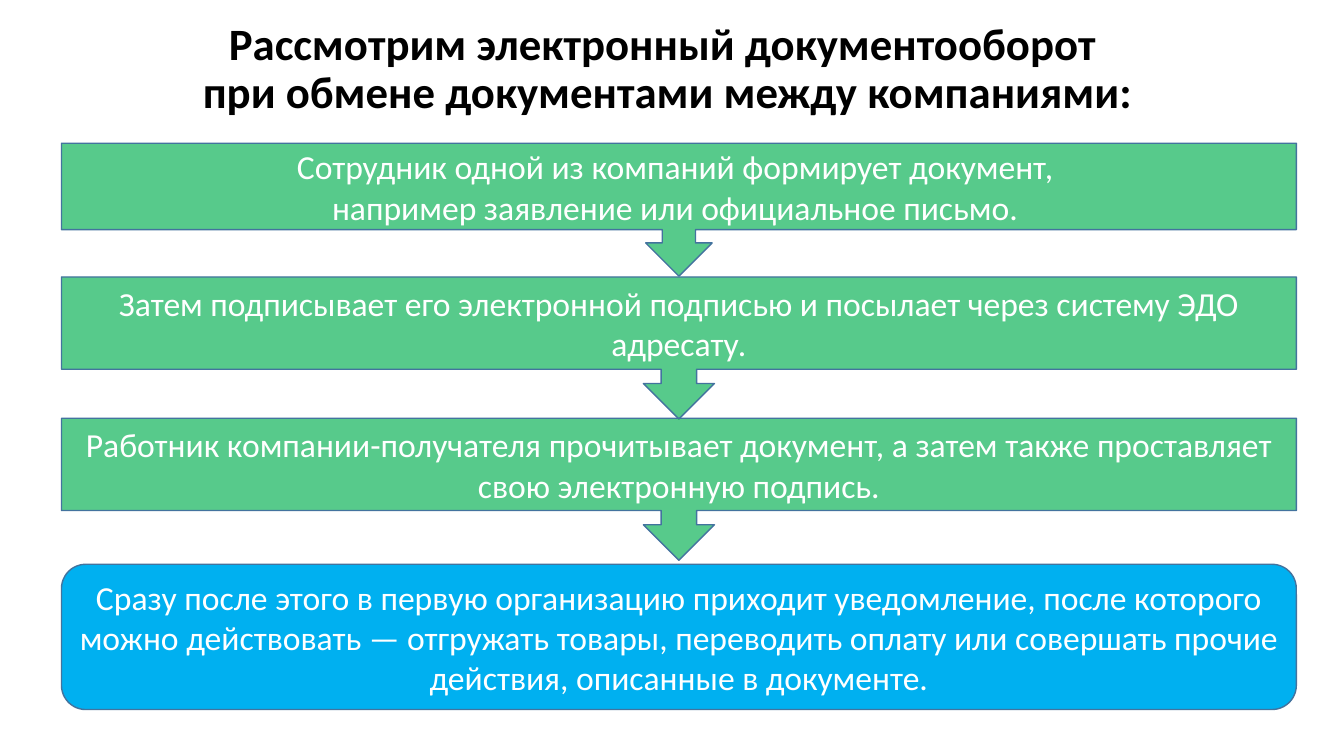
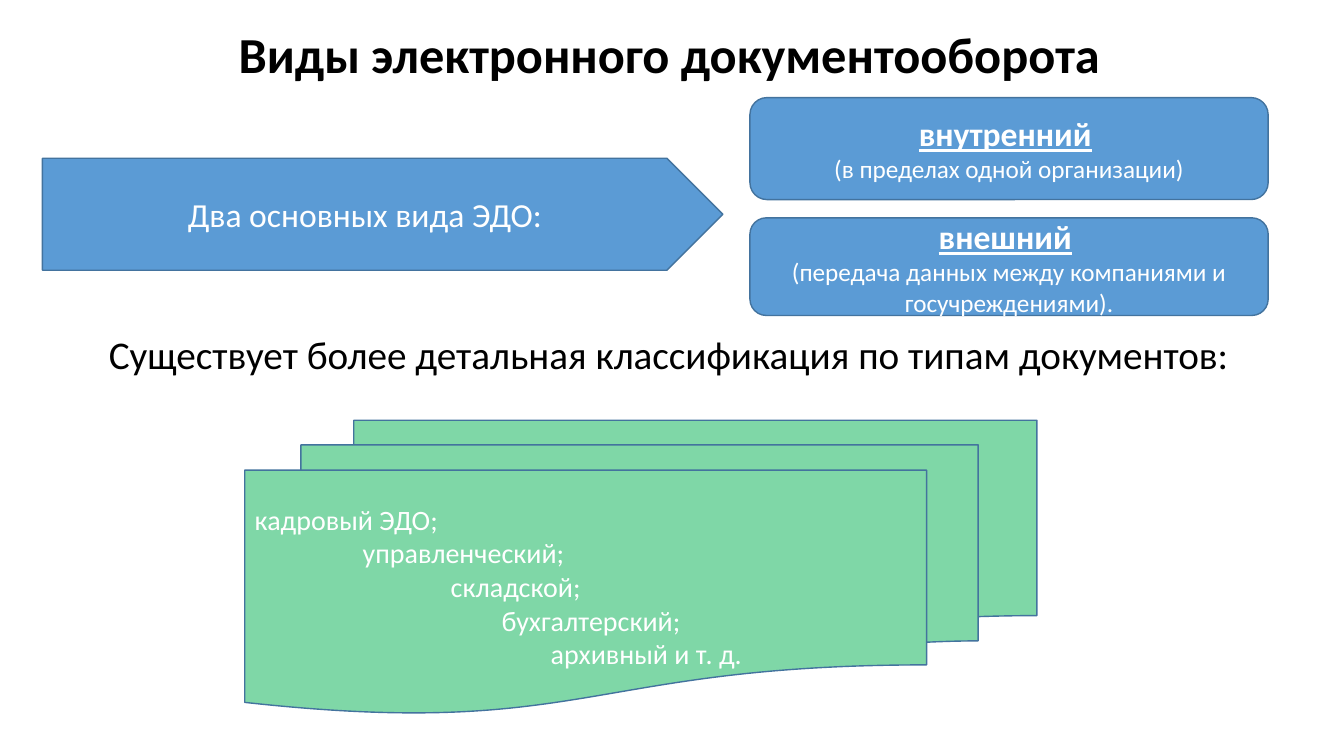
"""Build two slides on electronic document exchange."""
from lxml.etree import SubElement
from pptx import Presentation
from pptx.dml.color import RGBColor
from pptx.enum.shapes import MSO_SHAPE
from pptx.enum.text import MSO_ANCHOR, PP_ALIGN
from pptx.oxml.ns import qn
from pptx.util import Cm, Pt

BLACK = RGBColor(0x00, 0x00, 0x00)
WHITE = RGBColor(0xFF, 0xFF, 0xFF)
GREEN = RGBColor(0x00, 0xB0, 0x50)
AQUA = RGBColor(0x00, 0xB0, 0xF0)
BLUE = RGBColor(0x5B, 0x9B, 0xD5)
EDGE = RGBColor(0x43, 0x73, 0x9E)

BASE = {"name": "Calibri", "size": Pt(24)}
TITLE = {"size": Pt(32), "bold": True}
LARGE = {"size": Pt(36), "bold": True}
LEAD = {"size": Pt(28)}
KIND = {"bold": True, "underline": True}
NOTE = {"size": Pt(18)}
ITEM = {"size": Pt(20)}

FLOW_TITLE = [
    "Рассмотрим электронный документооборот ",
    "при обмене документами между компаниями:",
]
STEPS = [
    (3.61, 3.35, [
        "Сотрудник одной из компаний формирует документ, ",
        "например заявление или официальное письмо. ",
    ]),
    (6.98, 3.58, [
        "Затем подписывает его электронной подписью и посылает "
        "через систему ЭДО адресату.",
    ]),
    (10.54, 3.58, [
        "Работник компании-получателя прочитывает документ, а затем "
        "также проставляет свою электронную подпись.",
    ]),
]
RESULT = [
    "Сразу после этого в первую организацию приходит уведомление, "
    "после которого можно действовать — отгружать товары, переводить "
    "оплату или совершать прочие действия, описанные в документе.",
]
KINDS_TITLE = ["Виды электронного документооборота"]
ARROW = ["Два основных вида ЭДО: "]
KINDS = [
    (2.46, 2.57, "внутренний", "(в пределах одной организации)"),
    (5.49, 2.46, "внешний",
     "(передача данных между компаниями и госучреждениями)."),
]
DETAIL = ["Существует более детальная классификация по типам документов:"]
TYPES = [
    ("кадровый ЭДО;", 0),
    ("управленческий;", 2.72),
    ("складской;", 4.94),
    ("бухгалтерский;", 6.22),
    ("архивный и т. д.", 7.46),
]


def style(font, color, *looks):
    for look in (BASE, *looks):
        for key, value in look.items():
            setattr(font, key, value)
    font.color.rgb = color


def write(shape, lines, color, look, align=PP_ALIGN.CENTER, space=None):
    frame = shape.text_frame
    frame.word_wrap = True
    frame.vertical_anchor = MSO_ANCHOR.MIDDLE
    for num, line in enumerate(lines):
        para = frame.add_paragraph() if num else frame.paragraphs[0]
        para.alignment = align
        para.line_spacing = space
        runs = [(line, {})] if isinstance(line, str) else line
        for text, extra in runs:
            run = para.add_run()
            run.text = text
            style(run.font, color, look, extra)
    return frame


def add_text(slide, place, lines, look):
    box = slide.shapes.add_textbox(*map(Cm, place))
    write(box, lines, BLACK, look, space=0.9)


def add_block(slide, kind, place, fill, lines, look=BASE,
              align=PP_ALIGN.CENTER, alpha=None):
    shape = slide.shapes.add_shape(kind, *map(Cm, place))
    shape.shadow.inherit = False
    shape.fill.solid()
    shape.fill.fore_color.rgb = fill
    shape.line.color.rgb = EDGE
    shape.line.width = Pt(1)
    if alpha:
        tint = shape.fill._xPr.find(qn("a:solidFill"))[0]
        SubElement(tint, qn("a:alpha"), val=str(alpha * 1000))
    return write(shape, lines, WHITE, look, align)


def add_flow(slide):
    add_text(slide, (1.02, 0.2, 31.62, 3.12), FLOW_TITLE, TITLE)
    left, width = 1.55, 31.12
    for top, height, lines in STEPS:
        add_block(slide, MSO_SHAPE.DOWN_ARROW_CALLOUT,
                  (left, top, width, height), GREEN, lines, alpha=66)
    add_block(slide, MSO_SHAPE.ROUNDED_RECTANGLE,
              (left, 14.22, width, 3.66), AQUA, RESULT)


def add_kinds(slide):
    add_text(slide, (2.08, 0.43, 29.59, 2.03), KINDS_TITLE, LARGE)
    add_text(slide, (1.07, 8.13, 31.55, 1.7), DETAIL, LEAD)
    add_block(slide, MSO_SHAPE.PENTAGON, (1.07, 3.99, 17.15, 2.82),
              BLUE, ARROW)
    for top, height, name, note in KINDS:
        lines = [[(name, KIND), (" ", {})], [(note, NOTE)]]
        add_block(slide, MSO_SHAPE.FLOWCHART_ALTERNATE_PROCESS,
                  (18.9, top, 13.06, height), BLUE, lines)
    frame = add_block(slide, MSO_SHAPE.FLOWCHART_MULTIDOCUMENT,
                      (6.17, 10.59, 19.96, 7.39), GREEN,
                      [text for text, _ in TYPES], ITEM,
                      PP_ALIGN.LEFT, alpha=50)
    for para, (_, indent) in zip(frame.paragraphs, TYPES):
        para._p.get_or_add_pPr().set("marL", str(Cm(indent)))


def main():
    deck = Presentation()
    deck.slide_width, deck.slide_height = Cm(33.87), Cm(19.05)
    for fill in (add_flow, add_kinds):
        fill(deck.slides.add_slide(deck.slide_layouts[6]))
    deck.save("out.pptx")


if __name__ == "__main__":
    main()
